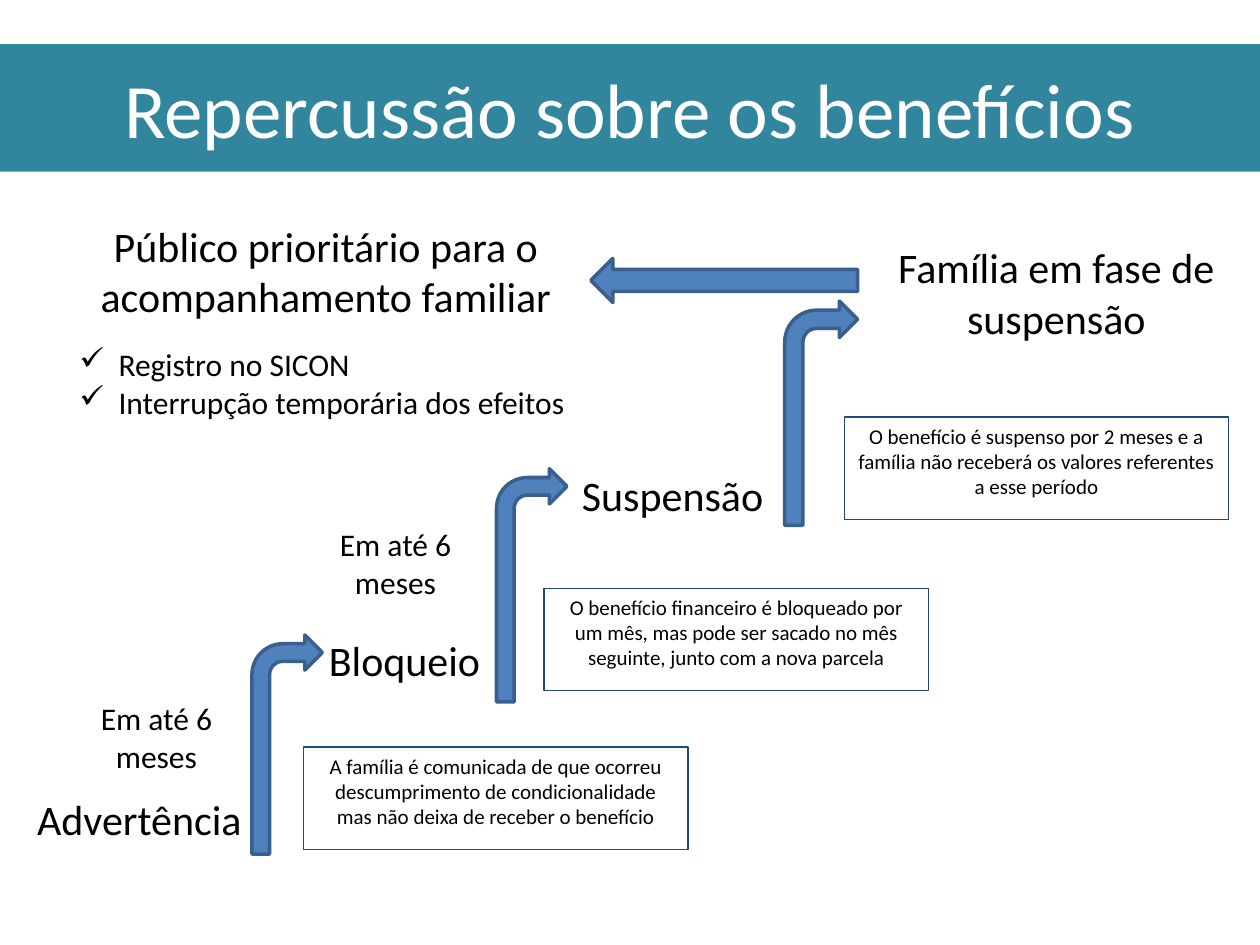
from dataclasses import dataclass

from lxml import etree
from pptx import Presentation
from pptx.dml.color import RGBColor
from pptx.enum.shapes import MSO_SHAPE
from pptx.enum.text import MSO_ANCHOR, PP_ALIGN
from pptx.oxml.ns import qn
from pptx.util import Cm, Pt

BENT_ARROW = MSO_SHAPE.BENT_ARROW
LEFT_ARROW = MSO_SHAPE.LEFT_ARROW
RECTANGLE = MSO_SHAPE.RECTANGLE
LEFT, CENTER = PP_ALIGN.LEFT, PP_ALIGN.CENTER
TOP, MIDDLE = MSO_ANCHOR.TOP, MSO_ANCHOR.MIDDLE
TITLE_ONLY = 5


@dataclass(frozen=True)
class Theme:
    font: str = "Calibri"
    band: RGBColor = RGBColor(0x31, 0x85, 0x9C)
    arrow: RGBColor = RGBColor(0x4F, 0x81, 0xBD)
    arrow_line: RGBColor = RGBColor(0x3A, 0x5F, 0x8C)
    note_line: RGBColor = RGBColor(0x1F, 0x49, 0x7D)
    text: RGBColor = RGBColor(0, 0, 0)
    title_text: RGBColor = RGBColor(255, 255, 255)
    title_size: int = 44
    label_size: int = 24
    body_size: int = 18
    note_size: int = 12


THEME = Theme()


@dataclass(frozen=True)
class Step:
    """One stage of the staircase; offsets are in cm from the label's corner."""
    label: str
    note: str
    box: tuple
    arrow: tuple
    note_offset: tuple
    wait_offset: tuple = None


STEPS = [
    Step("Advertência",
         "A família é comunicada de que ocorreu descumprimento de "
         "condicionalidade mas não deixa de receber o benefício",
         (0.5, 15.88, 4.78, 1.47), (4.58, -3.08, 1.42, 4.42),
         (5.62, -0.82), (0.85, -1.91)),
    Step("Bloqueio",
         "O benefício financeiro é bloqueado por um mês, mas pode ser "
         "sacado no mês seguinte, junto com a nova parcela",
         (6.38, 12.67, 4.62, 1.47), (3.63, -3.22, 1.42, 4.7),
         (4.59, -0.81), (-0.21, -2.21)),
    Step("Suspensão",
         "O benefício é suspenso por 2 meses e a família não receberá os "
         "valores referentes a esse período",
         (11.48, 9.35, 4.62, 1.47), (4.34, -3.28, 1.47, 4.52),
         (5.54, -0.94)),
]


def in_cm(box):
    return [Cm(value) for value in box]


def write_text(shape, lines, size, color=THEME.text, align=CENTER, anchor=TOP):
    frame = shape.text_frame
    frame.word_wrap = True
    frame.vertical_anchor = anchor
    frame.text = "\n".join(lines)
    for paragraph in frame.paragraphs:
        paragraph.alignment = align
        paragraph.font.name = THEME.font
        paragraph.font.size = Pt(size)
        paragraph.font.color.rgb = color


def add_text(slide, box, lines, size, align=CENTER):
    shape = slide.shapes.add_textbox(*in_cm(box))
    write_text(shape, lines, size, align=align)
    return shape


def add_arrow(slide, kind, box):
    shape = slide.shapes.add_shape(kind, *in_cm(box))
    shape.shadow.inherit = False
    shape.fill.solid()
    shape.fill.fore_color.rgb = THEME.arrow
    shape.line.color.rgb = THEME.arrow_line
    shape.line.width = Pt(2)


def add_note(slide, box, text):
    shape = slide.shapes.add_shape(RECTANGLE, *in_cm(box))
    shape.shadow.inherit = False
    shape.fill.background()
    shape.line.color.rgb = THEME.note_line
    shape.line.width = Pt(0.75)
    write_text(shape, [text], THEME.note_size)


def add_check_bullets(shape):
    for paragraph in shape.text_frame.paragraphs:
        properties = paragraph._p.get_or_add_pPr()
        properties.set("marL", str(Cm(0.79)))
        properties.set("indent", str(-Cm(0.79)))
        bullet = etree.Element(qn("a:buChar"), char="✓")
        # The bullet comes before the default run properties
        properties.insert(0, bullet)


def add_title(slide, box):
    title = slide.shapes.title
    title.left, title.top, title.width, title.height = in_cm(box)
    title.fill.solid()
    title.fill.fore_color.rgb = THEME.band
    write_text(title, ["Repercussão sobre os benefícios"], THEME.title_size,
               THEME.title_text, anchor=MIDDLE)


def add_step(slide, step):
    left, top = step.box[:2]
    add_text(slide, step.box, [step.label], THEME.label_size, LEFT)

    # Arrow up to the next stage
    x, y, width, height = step.arrow
    add_arrow(slide, BENT_ARROW, (left + x, top + y, width, height))

    # Effect on the benefit
    x, y = step.note_offset
    add_note(slide, (left + x, top + y, 7.75, 2.06), step.note)

    # Time limit before the next stage
    if step.wait_offset:
        x, y = step.wait_offset
        add_text(slide, (left + x, top + y, 3.61, 2.06), ["Em até 6 meses"],
                 THEME.body_size)


def add_outcome(slide, box):
    left, top, width, height = box
    # Final stage on the right, arrow back to the priority group
    add_text(slide, (left + width - 7.19, top + 0.43, 7.19, height / 2),
             ["Família em fase de suspensão"], THEME.label_size)
    add_arrow(slide, LEFT_ARROW, (left + 10.51, top + 0.89, 5.38, 0.89))
    add_text(slide, (left, top, 10.34, height / 2),
             ["Público prioritário para o acompanhamento familiar"],
             THEME.label_size)
    # Follow-up actions
    actions = add_text(slide, (left - 0.05, top + 2.51, 10.41, 2.06),
                       ["Registro no SICON",
                        "Interrupção temporária dos efeitos"],
                       THEME.body_size, LEFT)
    add_check_bullets(actions)


def main():
    presentation = Presentation()
    presentation.slide_width, presentation.slide_height = Cm(25.4), Cm(19.05)
    slide = presentation.slides.add_slide(
        presentation.slide_layouts[TITLE_ONLY])
    add_title(slide, (0, 0.89, 25.4, 2.57))
    for step in STEPS:
        add_step(slide, step)
    add_outcome(slide, (1.4, 4.32, 23.49, 5.28))
    presentation.save("out.pptx")


if __name__ == "__main__":
    main()
